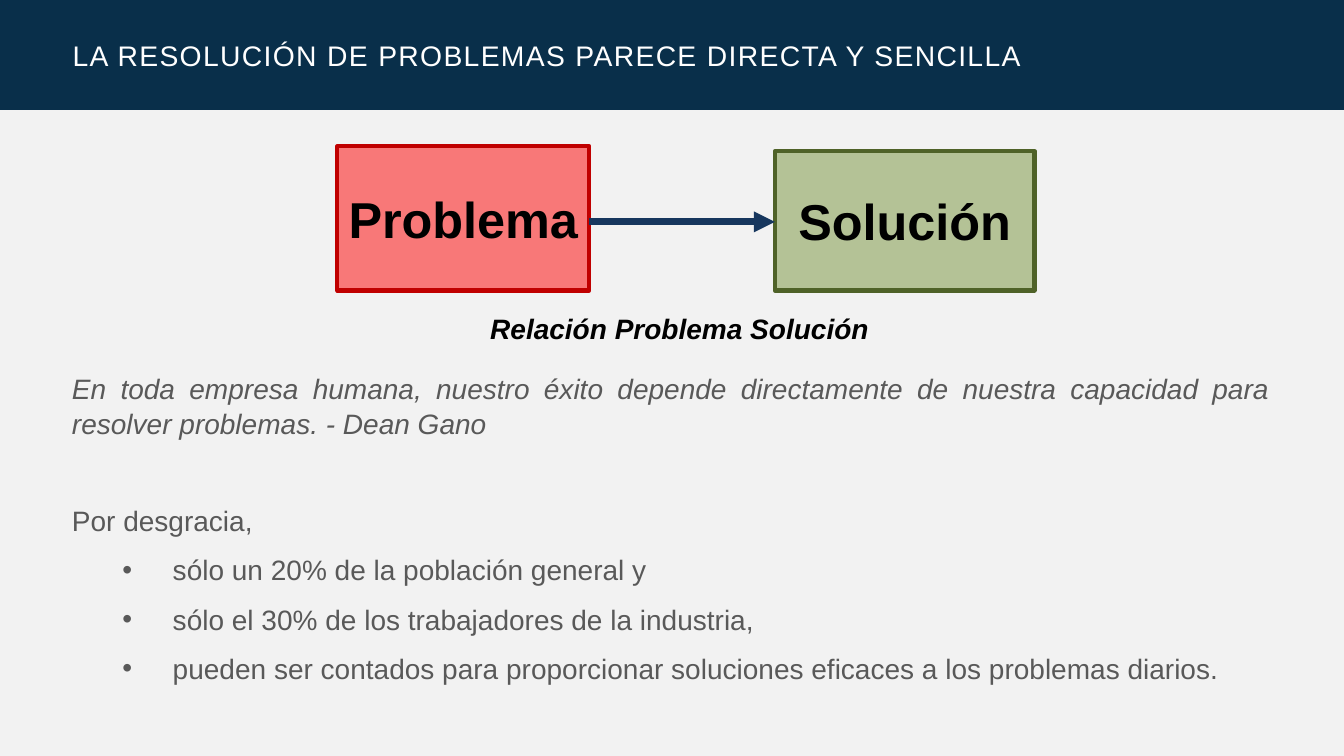
from lxml import etree
from pptx import Presentation
from pptx.dml.color import RGBColor
from pptx.enum.shapes import MSO_CONNECTOR, MSO_SHAPE
from pptx.enum.text import MSO_ANCHOR, MSO_AUTO_SIZE, PP_ALIGN
from pptx.oxml.ns import qn
from pptx.util import Pt

RECTANGLE = MSO_SHAPE.RECTANGLE
MIDDLE = MSO_ANCHOR.MIDDLE
LEFT, CENTER, JUSTIFY = PP_ALIGN.LEFT, PP_ALIGN.CENTER, PP_ALIGN.JUSTIFY

BACKGROUND = RGBColor(0xF2, 0xF2, 0xF2)
NAVY = RGBColor(0x09, 0x2F, 0x4A)
WHITE = RGBColor(0xFF, 0xFF, 0xFF)
BLACK = RGBColor(0x00, 0x00, 0x00)
GRAY = RGBColor(0x59, 0x59, 0x59)
RED = RGBColor(0xFF, 0x00, 0x00)
DARK_RED = RGBColor(0xC0, 0x00, 0x00)
GREEN = RGBColor(0x77, 0x93, 0x3C)
DARK_GREEN = RGBColor(0x4F, 0x62, 0x28)
ARROW_BLUE = RGBColor(0x17, 0x37, 0x5E)


def set_font(paragraph, size, color, bold=False, italic=False):
    font = paragraph.font
    font.name = "Arial"
    font.size = Pt(size)
    font.bold = bold
    font.italic = italic
    font.color.rgb = color


def set_margins(frame):
    frame.margin_left = frame.margin_right = Pt(9.4)
    frame.margin_top = frame.margin_bottom = Pt(5)


presentation = Presentation()
presentation.slide_width, presentation.slide_height = Pt(960), Pt(540)
slide = presentation.slides.add_slide(presentation.slide_layouts[5])
slide.background.fill.solid()
slide.background.fill.fore_color.rgb = BACKGROUND

# Title on its band
title = slide.shapes.title
title.left, title.top, title.width, title.height = Pt(42.5), Pt(0), Pt(874), Pt(79)
title.text_frame.text = "LA RESOLUCIÓN DE PROBLEMAS PARECE DIRECTA Y SENCILLA"
title.text_frame.auto_size = MSO_AUTO_SIZE.NONE
title.text_frame.vertical_anchor = MIDDLE
set_margins(title.text_frame)
paragraph = title.text_frame.paragraphs[0]
paragraph.alignment = LEFT
set_font(paragraph, 20.2, WHITE)
paragraph.runs[0].font.size = Pt(20.2)
paragraph.runs[0].font._element.set("spc", "100")

band = slide.shapes.add_shape(RECTANGLE, Pt(0), Pt(0), Pt(960), Pt(78.5))
band.shadow.inherit = False
band.fill.solid()
band.fill.fore_color.rgb = NAVY
band.line.fill.background()
title.element.addprevious(band.element)

# Problem and solution boxes, half transparent
for label, left, top, width, height, fill, outline in (
    ("Problema", 241, 104.5, 180, 103, RED, DARK_RED),
    ("Solución", 553.5, 108, 185.5, 99.5, GREEN, DARK_GREEN),
):
    box = slide.shapes.add_shape(RECTANGLE, Pt(left), Pt(top), Pt(width), Pt(height))
    box.shadow.inherit = False
    box.fill.solid()
    box.fill.fore_color.rgb = fill
    color_element = box.element.spPr.find(qn("a:solidFill"))[0]
    etree.SubElement(color_element, qn("a:alpha"), val="50000")
    box.line.color.rgb = outline
    box.line.width = Pt(3)
    box.text_frame.word_wrap = False
    box.text_frame.vertical_anchor = MIDDLE
    paragraph = box.text_frame.paragraphs[0]
    paragraph.text = label
    paragraph.alignment = CENTER
    set_font(paragraph, 36, BLACK, bold=True)

# Arrow between the boxes
arrow = slide.shapes.add_connector(
    MSO_CONNECTOR.STRAIGHT, Pt(421), Pt(158.5), Pt(553.5), Pt(158.5))
arrow.line.color.rgb = ARROW_BLUE
arrow.line.width = Pt(5)
etree.SubElement(arrow.line._get_or_add_ln(), qn("a:tailEnd"), type="triangle")
etree.SubElement(arrow.element.spPr, qn("a:effectLst"))

# Caption
caption = slide.shapes.add_textbox(Pt(337.5), Pt(221.5), Pt(296), Pt(29))
caption.text_frame.word_wrap = False
paragraph = caption.text_frame.paragraphs[0]
paragraph.text = "Relación Problema Solución"
paragraph.alignment = CENTER
paragraph.line_spacing = 0.9
set_font(paragraph, 20, BLACK, bold=True, italic=True)

# Quotation and bullet list
body = slide.shapes.add_textbox(Pt(42), Pt(259), Pt(874.5), Pt(245))
frame = body.text_frame
frame.word_wrap = True
set_margins(frame)
for index, (text, space_before, is_quote, is_bullet) in enumerate((
    ("En toda empresa humana, nuestro éxito depende directamente de nuestra "
     "capacidad para resolver problemas. - Dean Gano", 0, True, False),
    ("Por desgracia,", 38, False, False),
    ("sólo un 20% de la población general y", 4, False, True),
    ("sólo el 30% de los trabajadores de la industria,", 4, False, True),
    ("pueden ser contados para proporcionar soluciones eficaces a los "
     "problemas diarios.", 4, False, True),
)):
    paragraph = frame.add_paragraph() if index else frame.paragraphs[0]
    paragraph.text = text
    paragraph.alignment = JUSTIFY if is_quote else LEFT
    paragraph.line_spacing = 1.05
    paragraph.space_before = Pt(space_before)
    paragraph.space_after = Pt(6)
    if is_bullet:
        paragraph.level = 1
        properties = paragraph._p.get_or_add_pPr()
        properties.set("marL", str(Pt(72)))
        properties.set("indent", str(Pt(-36)))
        etree.SubElement(properties, qn("a:buFont"), typeface="Arial")
        etree.SubElement(properties, qn("a:buChar"), char="•")
    set_font(paragraph, 20, GRAY, italic=is_quote)

presentation.save("out.pptx")
